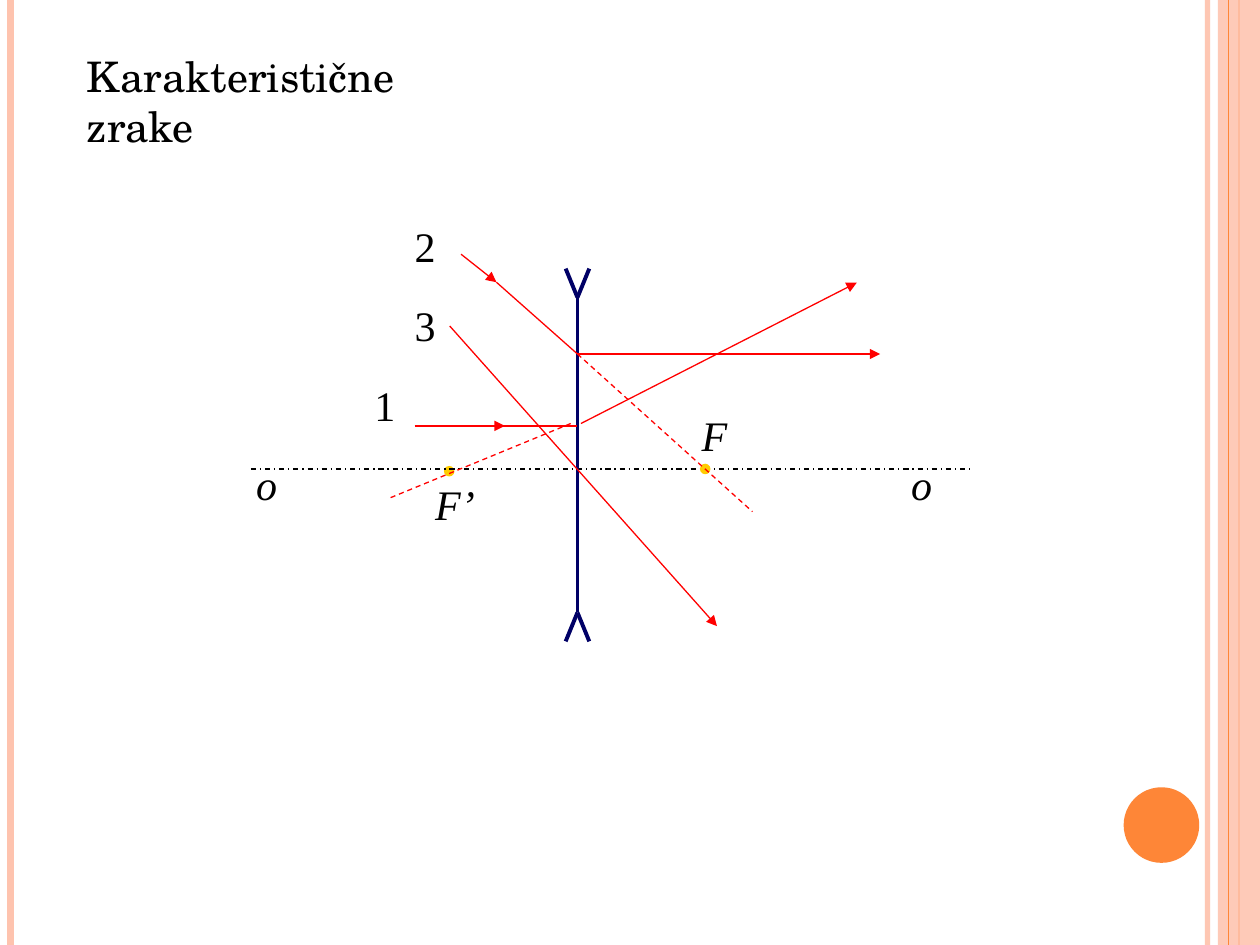
from lxml import etree
from pptx import Presentation
from pptx import util as u
from pptx.dml.color import RGBColor
from pptx.enum import dml, shapes, text
from pptx.oxml import ns

COLORS = {
    "ray": "FF0000", "lens": "000066", "focus": "FFCC00", "ink": "000000",
    "pink": "FEC3AE", "orange": "FE8637",
}
WIDTH, HEIGHT = 720, 540
LENS_X, LENS_TOP, LENS_BOTTOM = 330, 170, 350
FLARE_X, FLARE_Y = 6.75, 16.5
AXIS_Y = 268
RAY_1_Y, RAY_2_Y = 243.4, 202.3

# x, line width, colour, opacity in percent
LEFT_STRIPES = [(690, 3, "pink", 93), (6, 4.5, "pink", 100), (708, 1.5, "orange", 100)]

# start, end, dashed, arrow
RAYS = [
    ((286, RAY_1_Y), (LENS_X, RAY_1_Y), False, False),
    ((237, RAY_1_Y), (288.5, RAY_1_Y), False, True),
    ((332, 242), (489.6, 161.5), False, True),
    ((223.2, 284.4), (326.2, 242), True, False),
    ((257, 186.3), (409.7, 357.8), False, True),
    ((LENS_X, RAY_2_Y), (503, RAY_2_Y), False, True),
    ((LENS_X, RAY_2_Y), (430, 292.4), True, False),
    ((283.7, 161.3), (LENS_X, RAY_2_Y), False, False),
    ((263.5, 145.3), (283.7, 161.3), False, True),
]

# text, centre x, centre y, width, italic
LABELS = [
    ("F’", 260, 288, 37.5, True),
    ("F", 408.2, 248.4, 29, True),
    ("o", 152.3, 276.5, 26.6, True),
    ("o", 526.7, 276.5, 26.6, True),
    ("1", 220, 231, 26.6, False),
    ("2", 243, 140.4, 26.6, False),
    ("3", 243, 185.8, 26.6, False),
]


def rgb(color):
    return RGBColor.from_string(COLORS[color])


def add_child(parent, tag, **attributes):
    return etree.SubElement(parent, ns.qn(tag), attributes)


def set_opacity(element, percent):
    """Make the solid colour inside the element partly transparent."""
    color = element.find(".//" + ns.qn("a:srgbClr"))
    add_child(color, "a:alpha", val=str(percent * 1000))


def add_line(slide, start, end, color, width=0.75, dash=None, arrow=False, opacity=100):
    points = [u.Pt(value) for value in (*start, *end)]
    connector = slide.shapes.add_connector(shapes.MSO_CONNECTOR.STRAIGHT, *points)
    connector.line.color.rgb = rgb(color)
    connector.line.width = u.Pt(width)
    if dash:
        connector.line.dash_style = dash
    properties = connector.element.spPr
    if opacity < 100:
        set_opacity(properties, opacity)
    if arrow:
        add_child(properties.find(ns.qn("a:ln")), "a:tailEnd", type="triangle")
    add_child(properties, "a:effectLst")


def add_solid(slide, preset, left, top, width, height, color):
    shape = slide.shapes.add_shape(
        preset, *[u.Pt(value) for value in (left, top, width, height)])
    shape.shadow.inherit = False
    shape.fill.solid()
    shape.fill.fore_color.rgb = rgb(color)
    shape.line.fill.background()
    return shape


def add_dot(slide, x, y, diameter, color):
    add_solid(slide, shapes.MSO_SHAPE.OVAL, x - diameter / 2, y - diameter / 2,
              diameter, diameter, color)


def write_text(shape, words, font_name, alignment, wrap, italic=False):
    frame = shape.text_frame
    frame_format = {
        "word_wrap": wrap,
        "auto_size": text.MSO_AUTO_SIZE.NONE,
        "vertical_anchor": text.MSO_ANCHOR.MIDDLE,
    }
    for name, value in frame_format.items():
        setattr(frame, name, value)
    paragraph = frame.paragraphs[0]
    paragraph.alignment = alignment
    run = paragraph.add_run()
    run.text = words
    font_format = {"name": font_name, "size": u.Pt(24), "bold": False, "italic": italic}
    for name, value in font_format.items():
        setattr(run.font, name, value)
    run.font.color.rgb = rgb("ink")


def add_title(slide, words):
    title = slide.shapes.title
    position = {"left": 42.5, "top": 39.6, "width": 245.5, "height": 36}
    for name, value in position.items():
        setattr(title, name, u.Pt(value))
    write_text(title, words, "TeX Gyre Schola", text.PP_ALIGN.LEFT, True)


def add_label(slide, words, x, y, width, italic):
    height = 36
    box = slide.shapes.add_textbox(
        *[u.Pt(value) for value in (x - width / 2, y - height / 2, width, height)])
    write_text(box, words, "Times New Roman", text.PP_ALIGN.CENTER, False, italic)


def add_frame(slide):
    """Draw the stripes and the disc along the slide edges."""
    for x, width, color, opacity in LEFT_STRIPES:
        add_line(slide, (x, 0), (x, HEIGHT), color, width, opacity=opacity)
    band = add_solid(slide, shapes.MSO_SHAPE.RECTANGLE, 696, 0, 24, HEIGHT, "pink")
    set_opacity(band.element.spPr, 87)
    add_line(slide, (702, 0), (702, HEIGHT), "orange")
    add_dot(slide, 663.7, 471.5, 43.2, "orange")


def add_lens(slide):
    """Draw the diverging lens symbol with its flared ends."""
    add_line(slide, (LENS_X, LENS_TOP), (LENS_X, LENS_BOTTOM), "lens", 2.25)
    for tip_y, flare_y in ((LENS_TOP, -FLARE_Y), (LENS_BOTTOM, FLARE_Y)):
        for flare_x in (-FLARE_X, FLARE_X):
            add_line(slide, (LENS_X, tip_y), (LENS_X + flare_x, tip_y + flare_y),
                     "lens", 2.25)


def main():
    presentation = Presentation()
    presentation.slide_width = u.Pt(WIDTH)
    presentation.slide_height = u.Pt(HEIGHT)
    slide = presentation.slides.add_slide(presentation.slide_layouts[5])
    add_frame(slide)
    add_title(slide, "Karakteristične zrake")
    add_dot(slide, 256.7, 269.3, 6, "focus")
    add_line(slide, (143.3, AXIS_Y), (556.5, AXIS_Y), "ink",
             dash=dml.MSO_LINE.DASH_DOT)
    add_lens(slide)
    add_dot(slide, 403, AXIS_Y, 6, "focus")
    for start, end, dashed, arrow in RAYS:
        dash = dml.MSO_LINE.DASH if dashed else None
        add_line(slide, start, end, "ray", dash=dash, arrow=arrow)
    for label in LABELS:
        add_label(slide, *label)
    presentation.save("out.pptx")


if __name__ == "__main__":
    main()
